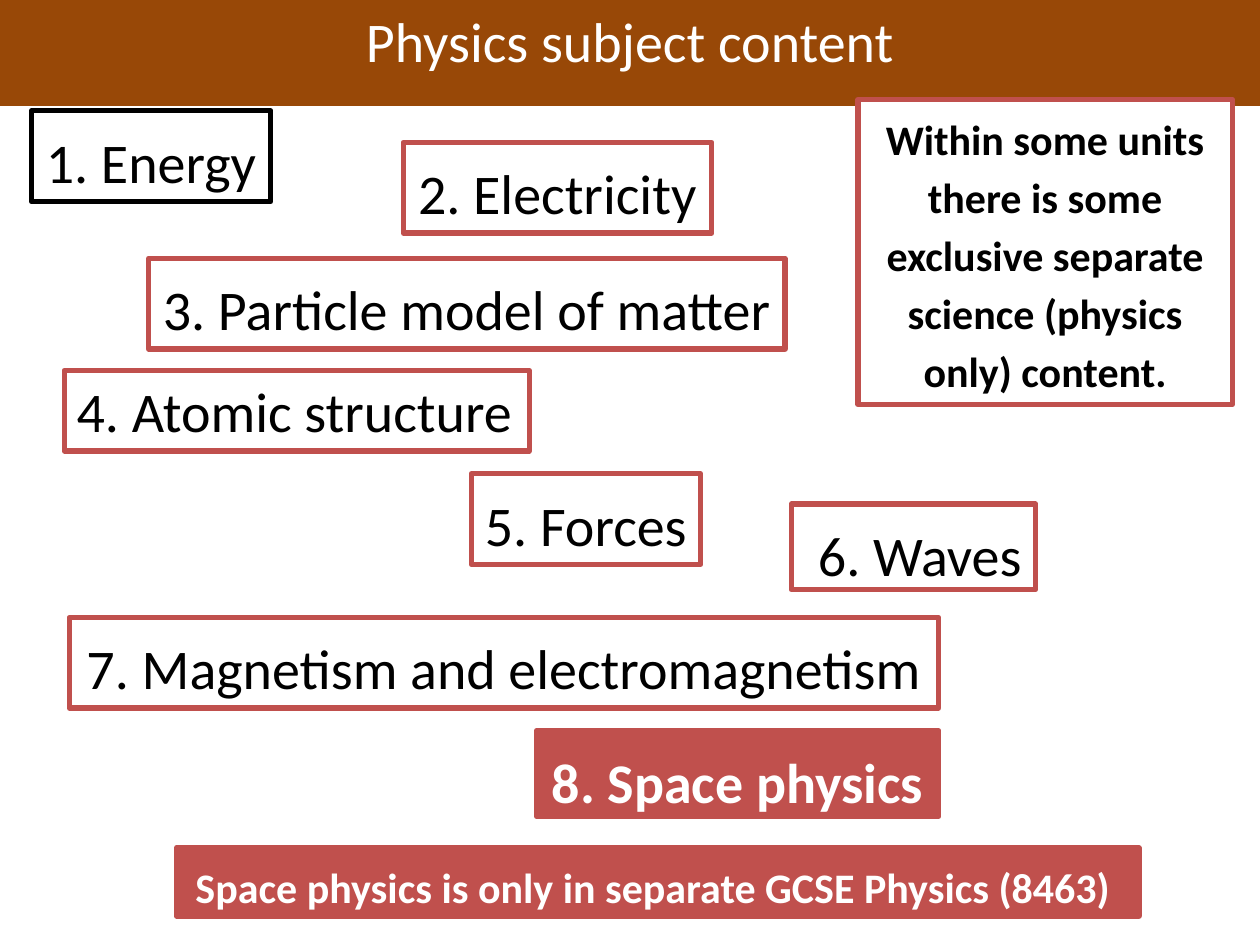
from pptx import Presentation
from pptx.dml.color import RGBColor
from pptx.enum import shapes, text
from pptx.util import Inches, Pt

BLACK = RGBColor(0, 0, 0)
WHITE = RGBColor(255, 255, 255)
RED = RGBColor(0xC0, 0x50, 0x4D)
BROWN = RGBColor(0x98, 0x48, 0x07)

# Units: label, (left, top, width, height), format
UNITS = [
    ("1. Energy", (0.25, 0.88, 1.9, 0.72), dict(line=BLACK)),
    ("2. Electricity", (3.2, 1.13, 2.45, 0.72), {}),
    ("3. Particle model of matter", (1.18, 2.05, 5.05, 0.72), {}),
    ("4. Atomic structure", (0.51, 2.94, 3.69, 0.64),
     dict(align=text.PP_ALIGN.LEFT, spacing=1.0)),
    ("5. Forces", (3.74, 3.76, 1.82, 0.72), {}),
    (" 6. Waves", (6.28, 4, 1.94, 0.68), {}),
    ("7. Magnetism and electromagnetism", (0.55, 4.9, 6.9, 0.72), {}),
    ("8. Space physics", (4.26, 5.8, 3.19, 0.68),
     dict(fill=RED, color=WHITE, bold=True)),
]


def write(shape, words, size=32, color=BLACK, bold=False, wrap=False,
          align=text.PP_ALIGN.CENTER, spacing=1.15):
    """Fill a shape with one formatted paragraph."""
    frame = shape.text_frame
    frame.word_wrap = wrap
    frame.auto_size = text.MSO_AUTO_SIZE.SHAPE_TO_FIT_TEXT
    frame.vertical_anchor = text.MSO_ANCHOR.TOP
    para = frame.paragraphs[0]
    para.alignment = align
    para.line_spacing = spacing
    run = para.add_run()
    run.text = words
    run.font.name = "Calibri"
    run.font.size = Pt(size)
    run.font.bold = bold
    run.font.color.rgb = color


def paint(shape, fill, line, width):
    shape.fill.solid()
    shape.fill.fore_color.rgb = fill
    shape.line.color.rgb = line
    shape.line.width = Pt(width)


def add_title(slide, words):
    bar = slide.shapes.title
    bar.left, bar.top = Inches(0), Inches(0)
    bar.width, bar.height = Inches(10), Inches(0.64)
    paint(bar, BROWN, BROWN, 0.75)
    write(bar, words, color=WHITE, wrap=True, spacing=1.0)


def add_box(slide, words, place, fill=WHITE, line=RED, **style):
    box = slide.shapes.add_shape(shapes.MSO_SHAPE.RECTANGLE,
                                 *[Inches(n) for n in place])
    box.shadow.inherit = False
    paint(box, fill, line, 3)
    write(box, words, **style)


def main():
    deck = Presentation()
    deck.slide_width, deck.slide_height = Inches(10), Inches(7.5)
    slide = deck.slides.add_slide(deck.slide_layouts[5])
    add_title(slide, "Physics subject content")

    # Course units
    for words, place, style in UNITS:
        add_box(slide, words, place, **style)

    # Notes on separate science
    add_box(slide, "Space physics is only in separate GCSE Physics (8463) ",
            (1.4, 6.73, 7.64, 0.54), fill=RED, color=WHITE, size=24, bold=True)
    add_box(slide, "Within some units there is some exclusive separate "
            "science (physics only) content.",
            (6.81, 0.79, 2.97, 2.42), size=24, bold=True, wrap=True)
    deck.save("out.pptx")


if __name__ == "__main__":
    main()
